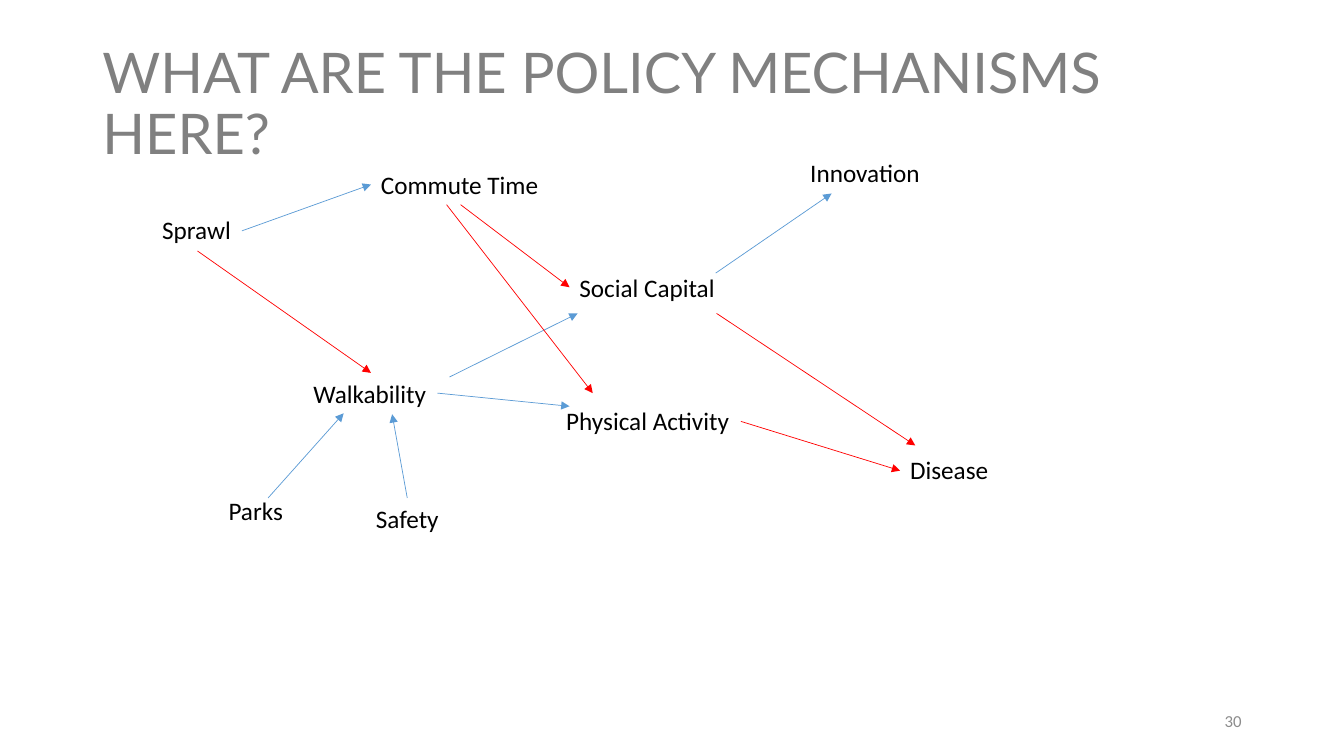
from dataclasses import dataclass

from lxml import etree
from pptx import Presentation
from pptx import util as u
from pptx.dml.color import RGBColor
from pptx.enum import shapes, text
from pptx.oxml import ns
from pptx.slide import Slide

BLACK = RGBColor(0x00, 0x00, 0x00)
TITLE_GRAY = RGBColor(0x80, 0x80, 0x80)
NUMBER_GRAY = RGBColor(0x8C, 0x8C, 0x8C)
BLUE = RGBColor(0x5B, 0x9B, 0xD5)
RED = RGBColor(0xFF, 0x00, 0x00)

FACTORS = [
    ("Safety", 261.4, 355.7, 59.8),
    ("Walkability", 216.7, 266.4, 95.8),
    ("Parks", 156.2, 350.6, 53.3),
    ("Physical Activity", 397.4, 285.8, 131.8),
    ("Disease", 643, 321.1, 71.3),
    ("Social Capital", 406.8, 190.8, 112.3),
    ("Sprawl", 108.7, 149.8, 64.1),
    ("Innovation", 571.7, 108.7, 93.6),
    ("Commute Time", 265, 117.4, 128.2),
]

POSITIVE_EFFECTS = [
    ((191.5, 355.7), (245.5, 295.2)),
    ((290.9, 355.7), (280.1, 295.9)),
    ((312.5, 280.8), (406.8, 290.2)),
    ((511.2, 195.1), (594, 138.2)),
    ((172.8, 164.9), (265, 131.8)),
    ((321.1, 269.3), (412.6, 223.9)),
]

NEGATIVE_EFFECTS = [
    ((329, 146.2), (406.8, 205.2)),
    ((529.2, 301), (643, 336.2)),
    ((511.9, 223.9), (653.8, 318.2)),
    ((141.1, 179.3), (265, 266.4)),
    ((319, 146.2), (423.4, 280.8)),
]


def write(frame, words, font="Calibri", size=18, color=BLACK, wrap=True,
          align=text.PP_ALIGN.LEFT, anchor=text.MSO_ANCHOR.TOP,
          fit=text.MSO_AUTO_SIZE.NONE, spacing=1.0):
    frame.word_wrap = wrap
    frame.auto_size = fit
    frame.vertical_anchor = anchor
    paragraph = frame.paragraphs[0]
    paragraph.alignment = align
    paragraph.line_spacing = spacing
    run = paragraph.add_run()
    run.text = words
    run.font.name = font
    run.font.size = u.Pt(size)
    run.font.color.rgb = color


@dataclass
class Diagram:
    slide: Slide
    label_height: float = 29
    arrow_width: float = 0.5

    def title(self, words, left, top, width, height):
        heading = self.slide.shapes.title
        heading.left, heading.top = u.Pt(left), u.Pt(top)
        heading.width, heading.height = u.Pt(width), u.Pt(height)
        write(heading.text_frame, words, font="Lato", size=40,
              color=TITLE_GRAY, spacing=0.9)

    def label(self, words, left, top, width, **style):
        factor = self.slide.shapes.add_textbox(
            u.Pt(left), u.Pt(top), u.Pt(width), u.Pt(self.label_height))
        write(factor.text_frame, words, **style)

    def arrow(self, cause, effect, color):
        link = self.slide.shapes.add_connector(
            shapes.MSO_CONNECTOR.STRAIGHT,
            *(u.Pt(length) for length in cause + effect))
        link.line.color.rgb = color
        link.line.width = u.Pt(self.arrow_width)
        properties = link._element.spPr
        outline = properties.find(ns.qn("a:ln"))
        etree.SubElement(outline, ns.qn("a:tailEnd"), type="triangle")
        etree.SubElement(properties, ns.qn("a:effectLst"))


def main():
    deck = Presentation()
    deck.slide_width, deck.slide_height = u.Pt(960), u.Pt(540)
    diagram = Diagram(deck.slides.add_slide(
        deck.slide_layouts.get_by_name("Title Only")))

    diagram.title("WHAT ARE THE POLICY MECHANISMS HERE?", 66, 28.8, 828, 104.4)
    for name, left, top, width in FACTORS:
        diagram.label(name, left, top, width, wrap=False,
                      fit=text.MSO_AUTO_SIZE.SHAPE_TO_FIT_TEXT)
    for effects, color in ((POSITIVE_EFFECTS, BLUE), (NEGATIVE_EFFECTS, RED)):
        for cause, effect in effects:
            diagram.arrow(cause, effect, color)
    diagram.label("30", 678, 500.5, 216, size=12, color=NUMBER_GRAY,
                  align=text.PP_ALIGN.RIGHT, anchor=text.MSO_ANCHOR.MIDDLE)

    deck.save("out.pptx")


if __name__ == "__main__":
    main()
